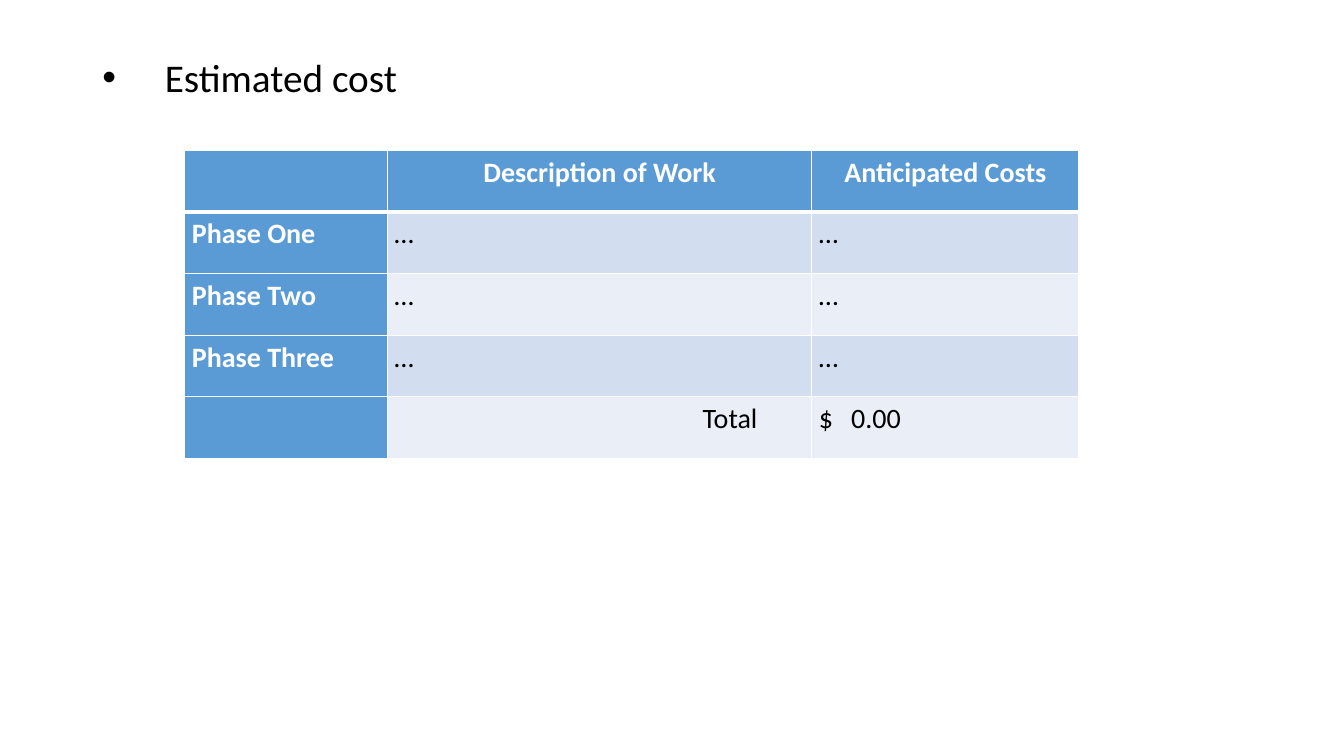
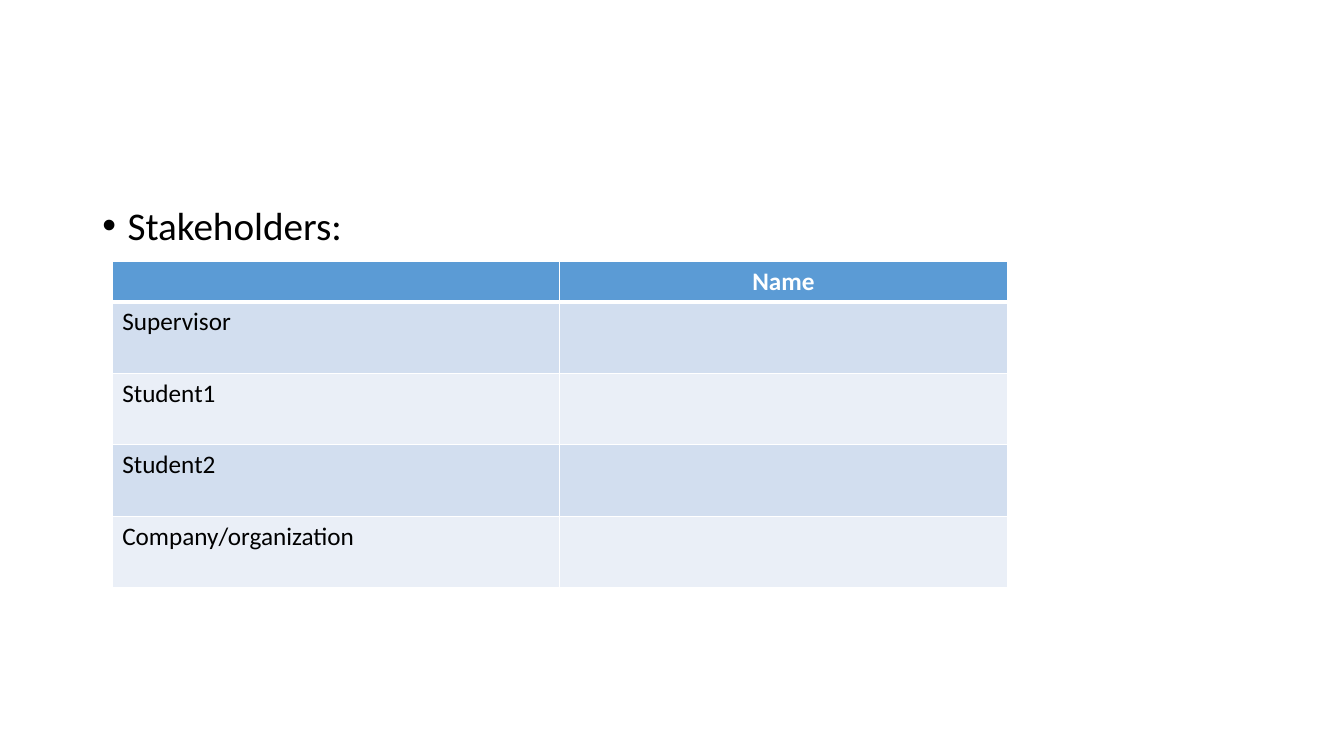
from dataclasses import dataclass

from lxml import etree
from pptx import Presentation
from pptx import util as u
from pptx.dml.color import RGBColor
from pptx.enum import text
from pptx.oxml.ns import qn


@dataclass(frozen=True)
class Theme:
    font: str = "Calibri"
    ink: str = "000000"
    white: str = "FFFFFF"
    accent: str = "5B9BD5"
    bands: tuple = ("D2DEEF", "EAEFF7")
    heading_size: int = 28
    cost_size: int = 20
    people_size: int = 18
    rule: int = 1
    header_rule: int = 3


THEME = Theme()
WIDTH, HEIGHT = u.Inches(13.33), u.Inches(7.5)
LEFT, CENTER, RIGHT = text.PP_ALIGN.LEFT, text.PP_ALIGN.CENTER, text.PP_ALIGN.RIGHT


# Lengths as percentages of the slide
def across(percent):
    return round(WIDTH * percent / 100)


def down(percent):
    return round(HEIGHT * percent / 100)


def add_run(paragraph, words, size, color, bold=False):
    run = paragraph.add_run()
    run.text = words
    run.font.name = THEME.font
    run.font.size = u.Pt(size)
    run.font.bold = bold
    run.font.color.rgb = RGBColor.from_string(color)


def add_heading(slide, words, top, height, indent, anchor):
    """One bulleted line with a hanging indent."""
    box = slide.shapes.add_textbox(across(6.88), down(top), across(86.25), down(height))
    frame = box.text_frame
    frame.word_wrap = True
    frame.vertical_anchor = anchor
    paragraph = frame.paragraphs[0]
    paragraph.line_spacing = 0.9
    props = paragraph._p.get_or_add_pPr()
    props.set("marL", str(u.Inches(indent)))
    props.set("indent", str(-u.Inches(indent)))
    etree.SubElement(props, qn("a:buFont"), typeface="Arial")
    etree.SubElement(props, qn("a:buChar"), char="•")
    add_run(paragraph, words, THEME.heading_size, THEME.ink)


def add_borders(cell, top, bottom):
    props = cell._tc.get_or_add_tcPr()
    for side, points in (("L", THEME.rule), ("R", THEME.rule), ("T", top), ("B", bottom)):
        line = etree.SubElement(props, qn(f"a:ln{side}"), w=str(u.Pt(points)))
        fill = etree.SubElement(line, qn("a:solidFill"))
        etree.SubElement(fill, qn("a:srgbClr"), val=THEME.white)


def add_banded_table(slide, left, top, columns, heights, rows, size,
                     header_column=False, spacing=None, tight=False):
    """Table with a header row, banded body and optional header column."""
    table = slide.shapes.add_table(
        len(rows), len(columns), across(left), down(top),
        across(sum(columns)), down(sum(heights))).table
    for column, share in zip(table.columns, columns):
        column.width = across(share)
    for row, share in zip(table.rows, heights):
        row.height = down(share)

    for r, entries in enumerate(rows):
        for c, words in enumerate(entries):
            cell = table.cell(r, c)
            is_header = r == 0 or (header_column and c == 0)
            add_borders(cell,
                        THEME.header_rule if r == 1 else THEME.rule,
                        THEME.header_rule if r == 0 else THEME.rule)
            cell.fill.solid()
            cell.fill.fore_color.rgb = RGBColor.from_string(
                THEME.accent if is_header else THEME.bands[(r - 1) % 2])
            if tight:
                cell.margin_left = cell.margin_right = u.Inches(0.07)
                cell.margin_top = cell.margin_bottom = 0
            paragraph = cell.text_frame.paragraphs[0]
            paragraph.alignment = CENTER if r == 0 else LEFT
            if spacing:
                paragraph.line_spacing = spacing
            if words:
                add_run(paragraph, words, size,
                        THEME.white if is_header else THEME.ink, is_header)
    return table


def style_total_row(table):
    """Total sits right with an inset; the amount follows a tab stop."""
    last = len(table.rows) - 1
    label, amount = table.cell(last, 1), table.cell(last, 2)
    label.text_frame.paragraphs[0].alignment = RIGHT
    label.margin_right = u.Inches(0.54)
    props = amount.text_frame.paragraphs[0]._p.get_or_add_pPr()
    stops = etree.SubElement(props, qn("a:tabLst"))
    etree.SubElement(stops, qn("a:tab"), pos=str(u.Inches(0.32)), algn="l")


def build_costs(slide):
    add_heading(slide, "Estimated cost", 5.33, 10.4, 0.62, text.MSO_ANCHOR.MIDDLE)
    phases = [(f"Phase {number}", "…", "…") for number in ("One", "Two", "Three")]
    rows = [("", "Description of Work", "Anticipated Costs"), *phases,
            ("", "Total", "$\t0.00")]
    costs = add_banded_table(slide, 13.75, 19.87, (15.08, 31.58, 19.88),
                             [8.16] * len(rows), rows, THEME.cost_size,
                             header_column=True, spacing=1.15, tight=True)
    style_total_row(costs)


def build_stakeholders(slide):
    add_heading(slide, "Stakeholders:", 26.67, 63.47, 0.25, text.MSO_ANCHOR.TOP)
    roles = ("Supervisor", "Student1", "Student2", "Company/organization")
    rows = [("", "Name"), *((role, "") for role in roles)]
    add_banded_table(slide, 8.35, 34.53, (33.3, 33.3),
                     [5.4] + [9.45] * len(roles), rows, THEME.people_size)


def main():
    deck = Presentation()
    deck.slide_width, deck.slide_height = WIDTH, HEIGHT
    blank = deck.slide_layouts[6]
    for build in (build_costs, build_stakeholders):
        build(deck.slides.add_slide(blank))
    deck.save("out.pptx")


if __name__ == "__main__":
    main()
